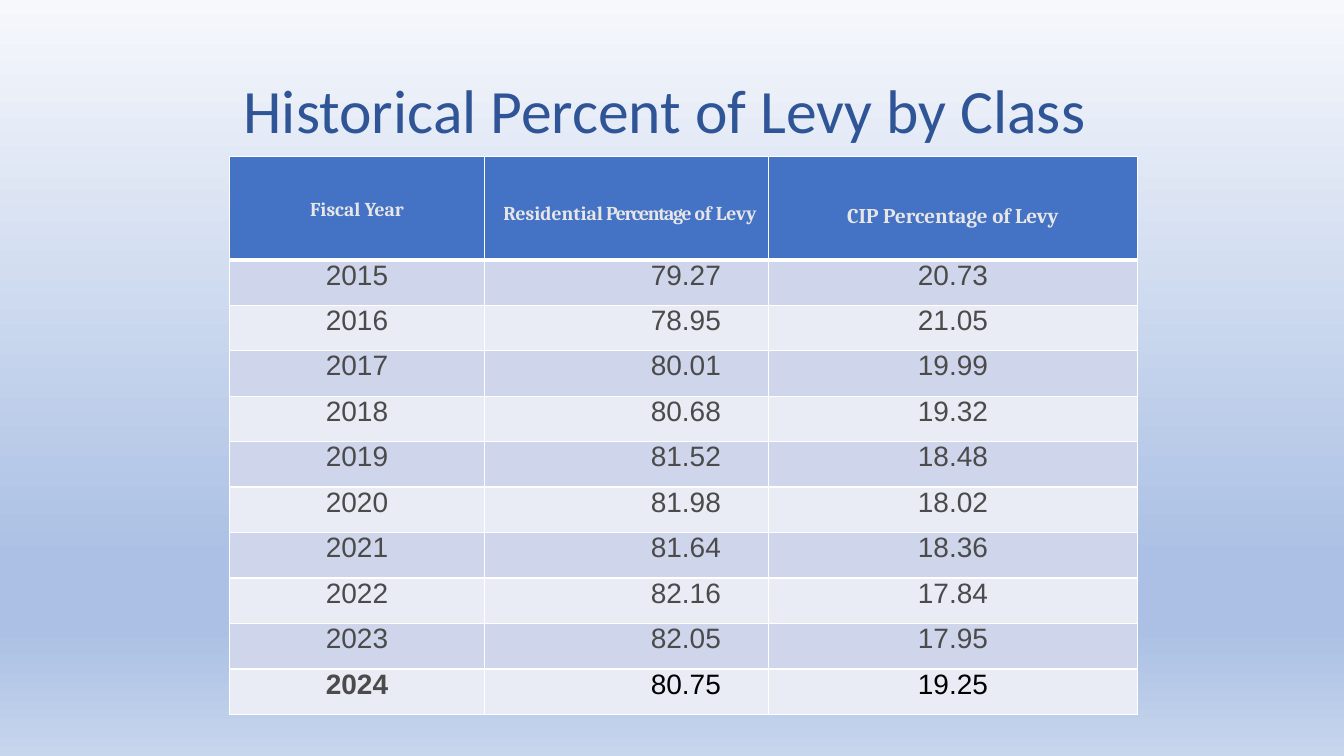
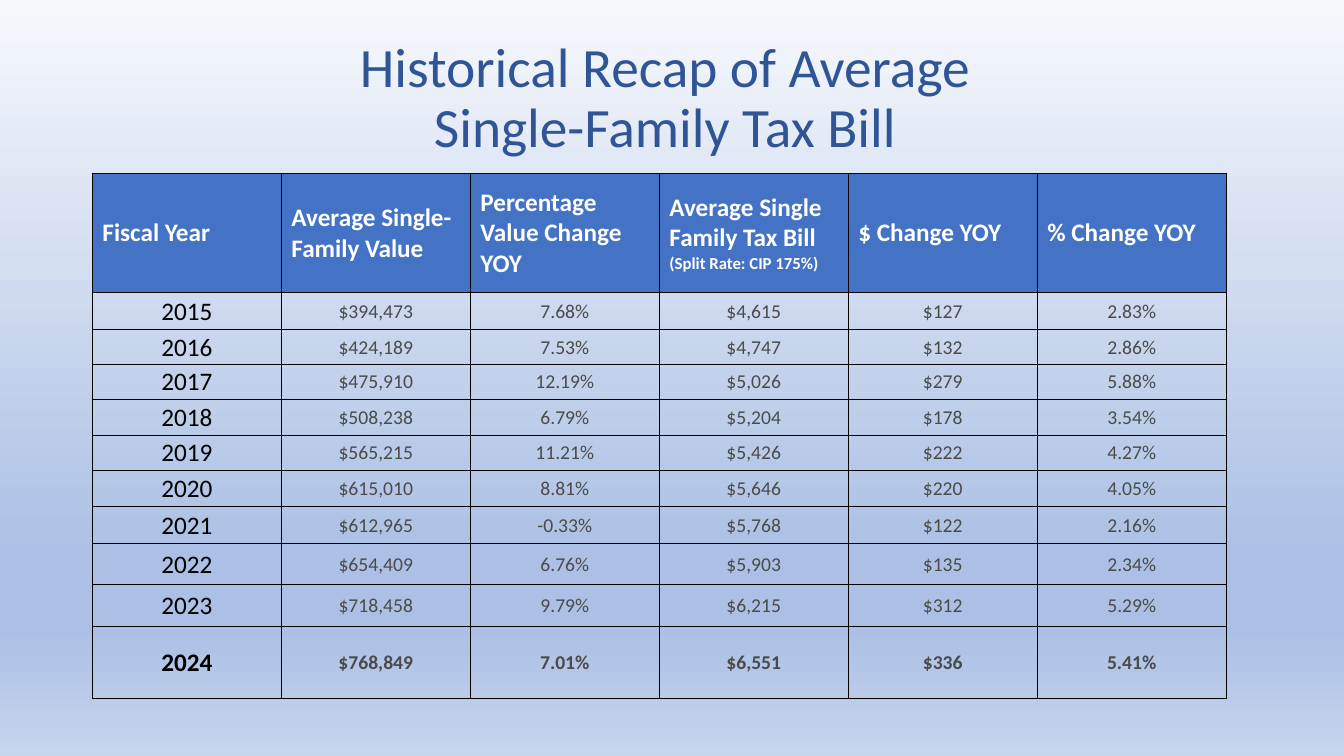
from dataclasses import dataclass, field, replace
from typing import Any

from lxml.etree import SubElement
from pptx import Presentation
from pptx.dml.color import RGBColor
from pptx.enum.text import MSO_ANCHOR, PP_ALIGN
from pptx.oxml import parse_xml
from pptx.oxml.ns import nsdecls, qn
from pptx.util import Pt

COLORS = {
    "title": "2F5597",
    "header": "4472C4",
    "band_dark": "CFD5EA",
    "band_light": "E9EBF5",
    "pale": "E7E6E6",
    "gray": "4B4B4B",
    "white": "FFFFFF",
    "black": "000000",
}
BACKGROUND_STOPS = ((0, "F6F8FC"), (74, "ABC0E4"), (83, "ABC0E4"), (100, "C7D5ED"))


@dataclass(frozen=True)
class Span:
    text: str
    size: float | None = None
    spacing: float = 0


@dataclass(frozen=True)
class CellStyle:
    """Font, fill and borders of a cell; margins run left, top, right, bottom."""
    font: str
    size: float
    color: str
    bold: bool = False
    align: PP_ALIGN = PP_ALIGN.CENTER
    anchor: MSO_ANCHOR = MSO_ANCHOR.TOP
    margins: tuple[float, float, float, float] = (0, 0, 0, 0)
    fill: str | None = None
    border: str = "white"
    widths: dict[str, float] = field(default_factory=lambda: dict.fromkeys("LRTB", 1))


@dataclass(frozen=True)
class CellText:
    spans: tuple[Span, ...]
    style: CellStyle


def text_cell(text: str, style: CellStyle) -> CellText:
    return CellText((Span(text),), style)


def set_attributes(target: Any, values: dict[str, Any]) -> None:
    for name, value in values.items():
        setattr(target, name, value)


def set_font(font: Any, name: str, size: float, color: str, bold: bool = False) -> None:
    set_attributes(font, {"name": name, "size": Pt(size), "bold": bold})
    font.color.rgb = RGBColor.from_string(COLORS[color])


def paint_background(master: Any) -> None:
    fill = master.background.fill
    fill.gradient()
    fill.gradient_angle = 270
    stops = next(master.element.iter(qn("a:gsLst")))
    for stop in list(stops):
        stops.remove(stop)
    for position, color in BACKGROUND_STOPS:
        stop = SubElement(stops, qn("a:gs"), pos=str(position * 1000))
        SubElement(stop, qn("a:srgbClr"), val=color)


def add_title(page: Any, text: str, size: float, height: float) -> None:
    box = page.shapes.add_textbox(Pt(61), Pt(29), Pt(828), Pt(height))
    set_attributes(box.text_frame, {"word_wrap": True, "vertical_anchor": MSO_ANCHOR.MIDDLE})
    para = box.text_frame.paragraphs[0]
    para.text = text
    set_attributes(para, {"alignment": PP_ALIGN.CENTER, "line_spacing": 0.9})
    set_font(para.font, "Calibri", size, "title")


def add_borders(cell: Any, style: CellStyle) -> None:
    properties = cell._tc.get_or_add_tcPr()
    for index, (side, width) in enumerate(style.widths.items()):
        properties.insert(index, parse_xml(
            f'<a:ln{side} {nsdecls("a")} w="{Pt(width)}"><a:solidFill>'
            f'<a:srgbClr val="{COLORS[style.border]}"/></a:solidFill></a:ln{side}>'))


def fill_cell(cell: Any, content: CellText) -> None:
    style = content.style
    left, top, right, bottom = map(Pt, style.margins)
    set_attributes(cell, {
        "margin_left": left, "margin_top": top, "margin_right": right,
        "margin_bottom": bottom, "vertical_anchor": style.anchor,
    })
    if style.fill:
        cell.fill.solid()
        cell.fill.fore_color.rgb = RGBColor.from_string(COLORS[style.fill])
    else:
        cell.fill.background()
    add_borders(cell, style)
    para = cell.text_frame.paragraphs[0]
    para.alignment = style.align
    for span in content.spans:
        run = para.add_run()
        run.text = span.text
        set_font(run.font, style.font, span.size or style.size, style.color, style.bold)
        if span.spacing:
            run.font._element.set("spc", str(round(span.spacing * 100)))


def add_grid(page: Any, left: float, top: float, widths: list[float],
             heights: list[float], rows: list[list[CellText]]) -> None:
    frame = page.shapes.add_table(len(heights), len(widths), Pt(left), Pt(top),
                                  Pt(sum(widths)), Pt(sum(heights)))
    table = frame.table
    set_attributes(table, {"first_row": False, "horz_banding": False})
    for column, width in zip(table.columns, widths):
        column.width = Pt(width)
    for row, height, contents in zip(table.rows, heights, rows):
        row.height = Pt(height)
        for cell, content in zip(row.cells, contents):
            fill_cell(cell, content)


LEVY_SHARES = [
    ("2015", "79.27", "20.73"),
    ("2016", "78.95", "21.05"),
    ("2017", "80.01", "19.99"),
    ("2018", "80.68", "19.32"),
    ("2019", "81.52", "18.48"),
    ("2020", "81.98", "18.02"),
    ("2021", "81.64", "18.36"),
    ("2022", "82.16", "17.84"),
    ("2023", "82.05", "17.95"),
    ("2024", "80.75", "19.25"),
]

TAX_BILLS = [
    ("2015", "$394,473", "7.68%", "$4,615", "$127", "2.83%"),
    ("2016", "$424,189", "7.53%", "$4,747", "$132", "2.86%"),
    ("2017", "$475,910", "12.19%", "$5,026", "$279", "5.88%"),
    ("2018", "$508,238", "6.79%", "$5,204", "$178", "3.54%"),
    ("2019", "$565,215", "11.21%", "$5,426", "$222", "4.27%"),
    ("2020", "$615,010", "8.81%", "$5,646", "$220", "4.05%"),
    ("2021", "$612,965", "-0.33%", "$5,768", "$122", "2.16%"),
    ("2022", "$654,409", "6.76%", "$5,903", "$135", "2.34%"),
    ("2023", "$718,458", "9.79%", "$6,215", "$312", "5.29%"),
    ("2024", "$768,849", "7.01%", "$6,551", "$336", "5.41%"),
]


def build_levy_page(page: Any) -> None:
    add_title(page, "Historical Percent of Levy by Class", 44, 104)
    header = CellStyle("Cambria", 14, "pale", bold=True, fill="header",
                       widths={"L": 1, "R": 1, "T": 1, "B": 3})
    residential = (Span("Residential"), Span(" Percentage ", spacing=-1), Span("of Levy"))
    rows = [[
        text_cell("Fiscal Year", replace(header, margins=(0, 30, 0, 0))),
        CellText(residential, replace(header, margins=(5, 33, 0, 0))),
        text_cell("CIP Percentage of Levy", replace(header, size=15, margins=(0, 34, 0, 0))),
    ]]
    for index, (year, *shares) in enumerate(LEVY_SHARES):
        latest = index == len(LEVY_SHARES) - 1
        body = CellStyle("Arial", 20, "gray", fill="band_light" if index % 2 else "band_dark")
        if index == 0:
            body = replace(body, widths={"L": 1, "R": 1, "T": 3, "B": 1})
        share = replace(body, color="black" if latest else "gray")
        right = replace(share, align=PP_ALIGN.RIGHT, margins=(0, 0, 34, 0))
        styles = (replace(body, bold=latest), right, share)
        rows.append([text_cell(text, style) for text, style in zip((year, *shares), styles)])
    add_grid(page, 164, 112, [182, 203, 263.5], [73.5] + [32.5] * len(LEVY_SHARES), rows)


def build_tax_bill_page(page: Any) -> None:
    add_title(page, "Historical Recap of Average\vSingle-Family Tax Bill", 39.6, 84)
    year_style = CellStyle("Calibri", 18, "black", anchor=MSO_ANCHOR.MIDDLE,
                           margins=(0.7, 0.7, 0.7, 0), border="black",
                           widths=dict.fromkeys("LRTB", 0.5))
    value_style = replace(year_style, size=14, color="gray")
    header = replace(year_style, color="white", bold=True, align=PP_ALIGN.LEFT,
                     margins=(7.2, 0.7, 0.7, 0), fill="header")
    headings = [
        (Span("Fiscal Year"),),
        (Span("Average Single-Family Value"),),
        (Span("Percentage Value Change YOY"),),
        (Span("Average Single Family Tax Bill "), Span("(Split Rate: CIP 175%)", 12)),
        (Span("$ Change YOY"),),
        (Span("% Change YOY"),),
    ]
    rows = [[CellText(spans, header) for spans in headings]]
    for year, *values in TAX_BILLS:
        latest = year == TAX_BILLS[-1][0]
        rows.append([text_cell(year, replace(year_style, bold=latest))]
                    + [text_cell(value, replace(value_style, bold=latest)) for value in values])
    heights = [85.5, 26.5, 25, 24.5, 26, 25, 26, 26.5, 29, 30, 51.5]
    add_grid(page, 66, 123.5, [135] * len(headings), heights, rows)


def main() -> None:
    deck = Presentation()
    set_attributes(deck, {"slide_width": Pt(960), "slide_height": Pt(540)})
    paint_background(deck.slide_master)
    for build in (build_levy_page, build_tax_bill_page):
        build(deck.slides.add_slide(deck.slide_layouts[6]))
    deck.save("out.pptx")


if __name__ == "__main__":
    main()
